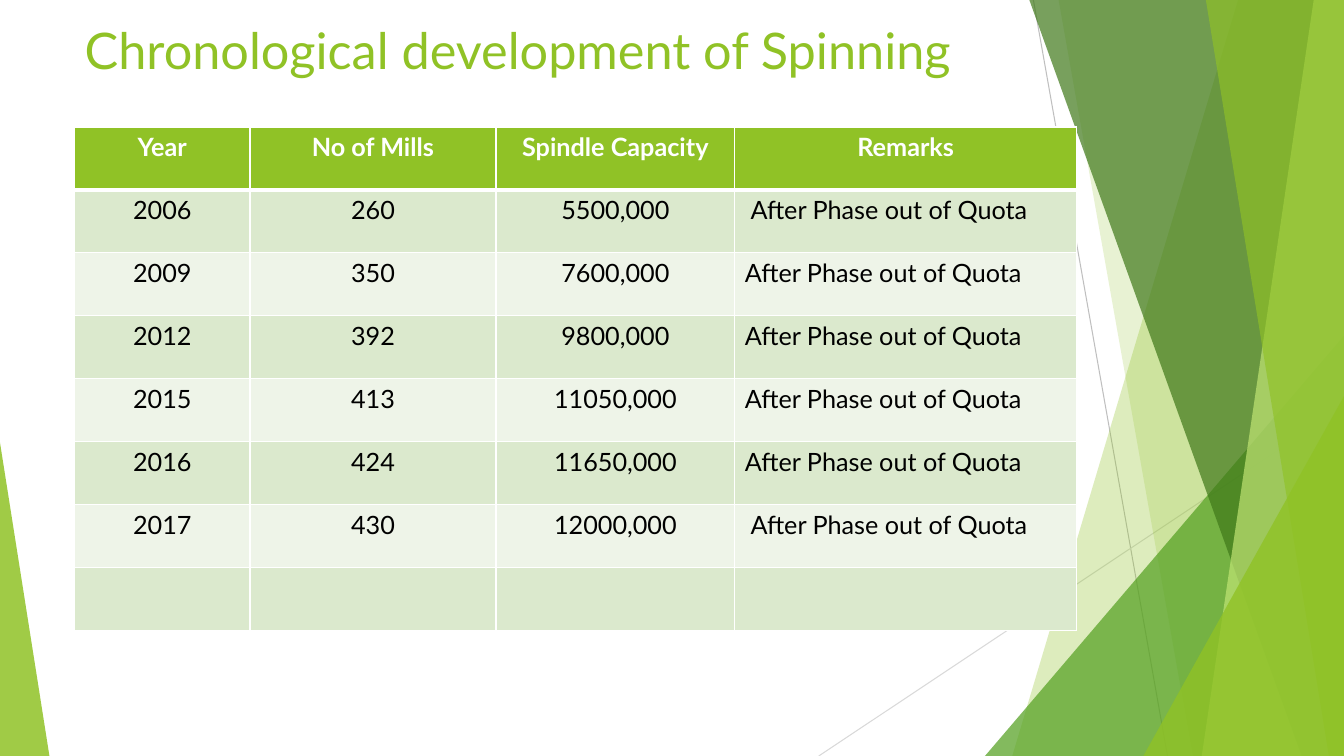
import lxml.etree
import pptx
import pptx.dml.color
import pptx.enum.shapes
import pptx.enum.text
import pptx.oxml
import pptx.oxml.ns
import pptx.util

COLORS = {
    "lime": "90C226", "green": "54A021", "forest": "3F7819", "pale": "C0E474",
    "white": "FFFFFF", "black": "000000", "band": "DBE9CD", "light_band": "EEF4E8",
    "gray": "BFBFBF", "light_gray": "D9D9D9",
}
LINES = [(76.89, 0, 86.87, 100, "gray"), (100, 53.73, 60.92, 100, "light_gray")]
BACK_PANELS = [(92.12, 75.32, "lime", 30), (78.77, 88.75, "lime", 20)]
FRONT_PANELS = [
    (76.59, 96.85, "forest", 70), (97.75, 89.42, "pale", 70), (89.72, 98.87, "lime", 65),
]
COLUMN_WIDTHS = [13.05, 18.3, 17.78, 25.43]
REMARK = "After Phase out of Quota"
ROWS = [
    ["Year", "No of Mills", "Spindle Capacity", "Remarks"],
    ["2006", "260", "5500,000", " " + REMARK],
    ["2009", "350", "7600,000", REMARK],
    ["2012", "392", "9800,000", REMARK],
    ["2015", "413", "11050,000", REMARK],
    ["2016", "424", "11650,000", REMARK],
    ["2017", "430", "12000,000", " " + REMARK],
    ["", "", "", ""],
]


class SlideBuilder:
    font = "Lato"

    def __init__(self, presentation):
        self.width = presentation.slide_width
        self.height = presentation.slide_height
        self.slide = presentation.slides.add_slide(presentation.slide_layouts[5])
        self.shapes = self.slide.shapes

    def x(self, percent):
        return round(self.width * percent / 100)

    def y(self, percent):
        return round(self.height * percent / 100)

    def color(self, name):
        return pptx.dml.color.RGBColor.from_string(COLORS[name])

    def style(self, paragraph, size, color, bold, alignment):
        paragraph.alignment = alignment
        for run in paragraph.runs:
            run.font.name = self.font
            run.font.size = pptx.util.Pt(size)
            run.font.bold = bold
            run.font.color.rgb = self.color(color)

    def paint(self, shape, color, opacity):
        shape.shadow.inherit = False
        shape.line.fill.background()
        shape.fill.solid()
        shape.fill.fore_color.rgb = self.color(color)
        color_element = shape.fill._xPr.find(".//" + pptx.oxml.ns.qn("a:srgbClr"))
        alpha = lxml.etree.SubElement(color_element, pptx.oxml.ns.qn("a:alpha"))
        alpha.set("val", str(opacity * 1000))

    def line(self, left, top, right, bottom, color):
        connector = self.shapes.add_connector(
            pptx.enum.shapes.MSO_CONNECTOR.STRAIGHT,
            self.x(left), self.y(top), self.x(right), self.y(bottom))
        connector.line.color.rgb = self.color(color)
        connector.line.width = pptx.util.Pt(0.75)
        lxml.etree.SubElement(connector._element.spPr, pptx.oxml.ns.qn("a:effectLst"))

    def panel(self, top_left, bottom_left, color, opacity):
        builder = self.shapes.build_freeform(self.x(top_left), 0)
        corners = [(100, 0), (100, 100), (bottom_left, 100)]
        builder.add_line_segments([(self.x(x), self.y(y)) for x, y in corners])
        self.paint(builder.convert_to_shape(), color, opacity)

    def triangle(self, left, top, width, apex, color, opacity):
        shape = self.shapes.add_shape(
            pptx.enum.shapes.MSO_SHAPE.ISOSCELES_TRIANGLE,
            self.x(left), self.y(top), self.x(width), self.y(100 - top))
        shape.adjustments[0] = apex
        self.paint(shape, color, opacity)

    def title(self, text, left, top, width, height):
        title = self.shapes.title
        title.left, title.top = self.x(left), self.y(top)
        title.width, title.height = self.x(width), self.y(height)
        frame = title.text_frame
        frame.text = text
        frame.word_wrap = True
        frame.auto_size = pptx.enum.text.MSO_AUTO_SIZE.NONE
        frame.vertical_anchor = pptx.enum.text.MSO_ANCHOR.TOP
        self.style(frame.paragraphs[0], 36, "lime", False, pptx.enum.text.PP_ALIGN.LEFT)
        self.shapes._spTree.append(title._element)

    def borders(self, cell, row):
        properties = cell._tc.get_or_add_tcPr()
        widths = {"L": 1, "R": 1, "T": 3 if row == 1 else 1, "B": 3 if row == 0 else 1}
        for side, width in widths.items():
            properties.append(pptx.oxml.parse_xml(
                f'<a:ln{side} {pptx.oxml.ns.nsdecls("a")} w="{pptx.util.Pt(width)}">'
                f'<a:solidFill><a:srgbClr val="{COLORS["white"]}"/></a:solidFill>'
                f'</a:ln{side}>'))

    def table(self, rows, left, top, column_widths, row_height):
        table = self.shapes.add_table(
            len(rows), len(column_widths), self.x(left), self.y(top),
            self.x(sum(column_widths)), self.y(row_height * len(rows))).table
        for column, width in zip(table.columns, column_widths):
            column.width = self.x(width)
        for row, values in enumerate(rows):
            table.rows[row].height = self.y(row_height)
            header = row == 0
            fill = "lime" if header else "band" if row % 2 else "light_band"
            for column, value in enumerate(values):
                cell = table.cell(row, column)
                self.borders(cell, row)
                cell.fill.solid()
                cell.fill.fore_color.rgb = self.color(fill)
                cell.text_frame.text = value
                centered = header or column < len(values) - 1
                alignment = pptx.enum.text.PP_ALIGN.CENTER if centered else pptx.enum.text.PP_ALIGN.LEFT
                self.style(cell.text_frame.paragraphs[0], 18,
                           "white" if header else "black", header, alignment)


def main():
    presentation = pptx.Presentation()
    presentation.slide_width = pptx.util.Inches(13.33)
    presentation.slide_height = pptx.util.Inches(7.5)
    builder = SlideBuilder(presentation)
    for line in LINES:
        builder.line(*line)
    for panel in BACK_PANELS:
        builder.panel(*panel)
    builder.triangle(73.29, 44.4, 26.71, 1, "green", 72)
    for panel in FRONT_PANELS:
        builder.panel(*panel)
    builder.triangle(85.07, 52.4, 14.93, 1, "lime", 80)
    builder.triangle(0, 58.53, 3.68, 0, "lime", 85)
    builder.title("Chronological development of Spinning", 5.55, 1.87, 70.52, 11.47)
    builder.table(ROWS, 5.55, 16.8, COLUMN_WIDTHS, 8.33)
    presentation.save("out.pptx")


if __name__ == "__main__":
    main()
